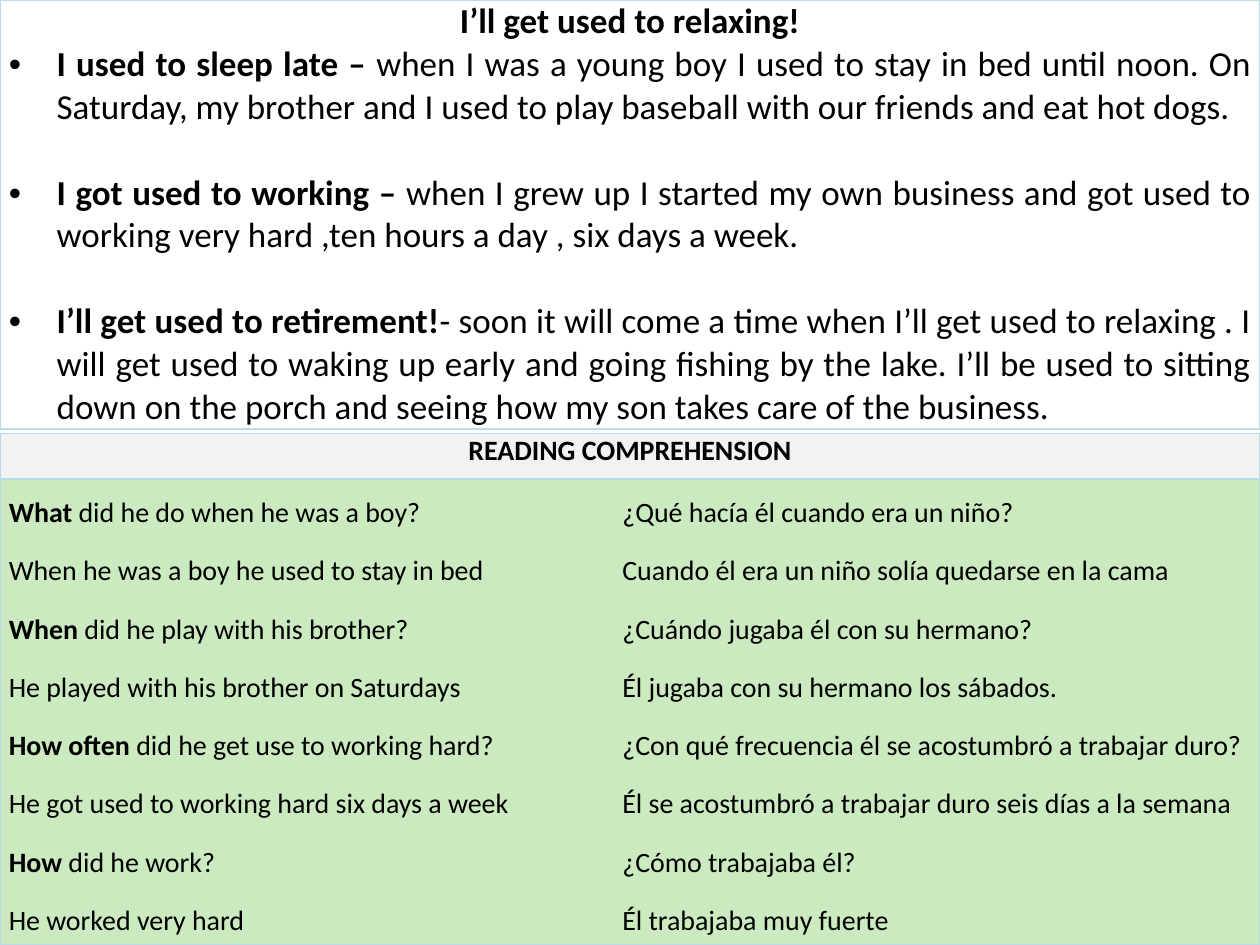
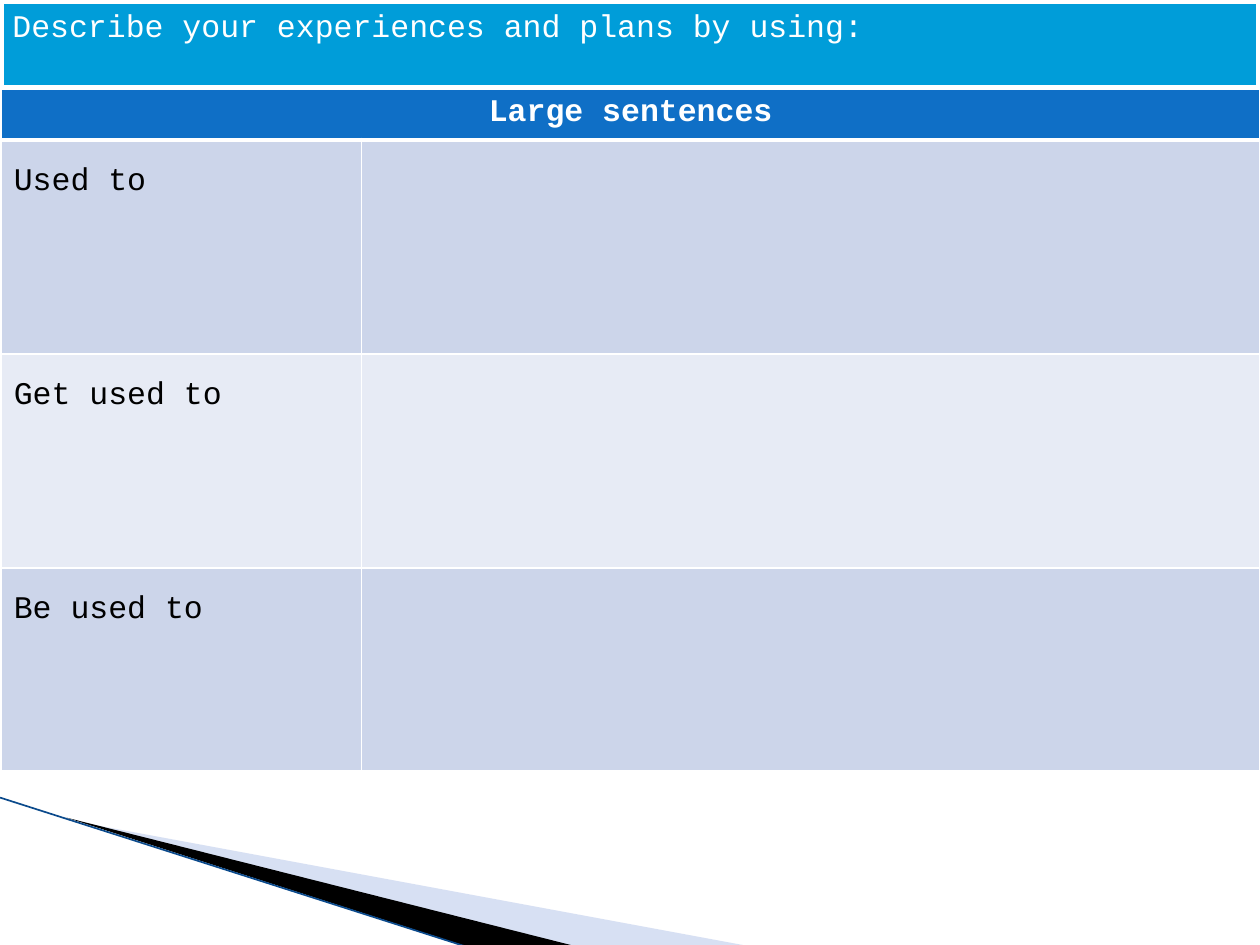
from dataclasses import dataclass

from lxml import etree
from pptx import Presentation
from pptx.dml.color import RGBColor
from pptx.enum.shapes import MSO_CONNECTOR, MSO_SHAPE
from pptx.enum.text import MSO_ANCHOR, PP_ALIGN
from pptx.oxml.ns import qn
from pptx.util import Inches, Pt

LEFT, CENTER, JUSTIFY = PP_ALIGN.LEFT, PP_ALIGN.CENTER, PP_ALIGN.JUSTIFY
TOP = MSO_ANCHOR.TOP
RECT = MSO_SHAPE.RECTANGLE
STRAIGHT = MSO_CONNECTOR.STRAIGHT


@dataclass(frozen=True)
class Theme:
    black: str = "000000"
    white: str = "FFFFFF"
    edge: str = "B6DDE8"
    gray: str = "F2F2F2"
    green: str = "CBEAC0"
    cyan: str = "009DD9"
    blue: str = "0F6FC6"
    bands: tuple = ("CCD5EA", "E7EBF5")
    pale: str = "9DB2E1"
    stripe: str = "0B4A8C"
    sans: str = "Calibri"
    mono: str = "Courier New"
    big: int = 20
    mid: int = 18
    small: int = 16


T = Theme()

TITLE = "I’ll get used to relaxing!"
STORY = [
    ("I used to sleep late – ",
     "when I was a young boy I used to stay in bed until noon. On Saturday, "
     "my brother and I used to play baseball with our friends and eat hot dogs."),
    ("I got used to working – ",
     "when I grew up I started my own business and got used to working very "
     "hard ,ten hours a day , six days a week."),
    ("I’ll get used to retirement!",
     "- soon it will come a time when I’ll get used to relaxing . I will get "
     "used to waking up early and going fishing by the lake. I’ll be used to "
     "sitting down on the porch and seeing how my son takes care of the business."),
]
# Bold lead, rest of the English line, Spanish line
QUIZ = [
    ("What", " did he do when he was a boy?", "¿Qué hacía él cuando era un niño?"),
    ("", "When he was a boy he used to stay in bed",
     "Cuando él era un niño solía quedarse en la cama"),
    ("When", " did he play with his brother?", "¿Cuándo jugaba él con su hermano?"),
    ("", "He played with his brother on Saturdays",
     "Él jugaba con su hermano los sábados."),
    ("How often", " did he get use to working hard?",
     "¿Con qué frecuencia él se acostumbró a trabajar duro?"),
    ("", "He got used to working hard six days a week",
     "Él se acostumbró a trabajar duro seis días a la semana"),
    ("How", " did he work?", "¿Cómo trabajaba él?"),
    ("", "He worked very hard", "Él trabajaba muy fuerte"),
]
FORMS = ["Used to", "Get used to", "Be used to"]


def rgb(code):
    return RGBColor.from_string(code)


def paint(fill, code):
    fill.solid()
    fill.fore_color.rgb = rgb(code)


def write(para, lead, rest, size, face, color=T.black, align=LEFT, space=None):
    """Fill a paragraph with a bold lead and a plain rest."""
    para.text = lead or rest
    if lead and rest:
        para.add_run().text = rest
    para.alignment = align
    if space:
        para.line_spacing = space
    for i, run in enumerate(para.runs):
        font = run.font
        font.size, font.name, font.color.rgb = Pt(size), face, rgb(color)
        font.bold = bool(lead) and i == 0


def bullet(para, indent):
    props = para._p.get_or_add_pPr()
    props.set("marL", str(Inches(indent)))
    props.set("indent", str(-Inches(indent)))
    etree.SubElement(props, qn("a:buFont")).set("typeface", "Arial")
    etree.SubElement(props, qn("a:buChar")).set("char", "•")


def border(cell, color, sides="LRTB", heavy=""):
    """Draw the named sides and clear the others."""
    props = cell._tc.get_or_add_tcPr()
    for i, side in enumerate("LRTB"):
        line = etree.Element(qn(f"a:ln{side}"), w=str(Pt(3 if side in heavy else 1)))
        if side in sides:
            fill = etree.SubElement(line, qn("a:solidFill"))
            etree.SubElement(fill, qn("a:srgbClr")).set("val", color)
        else:
            etree.SubElement(line, qn("a:noFill"))
        props.insert(i, line)


def grid(slide, box, cols, rows):
    """Add an unstyled table with set column widths and row heights."""
    x, y, w, h = box
    frame = slide.shapes.add_table(len(rows), len(cols), Inches(x), Inches(y),
                                   Inches(w), Inches(h))
    table = frame.table
    table.first_row = table.horz_banding = False
    for col, wide in zip(table.columns, cols):
        col.width = Inches(wide)
    for row, high in zip(table.rows, rows):
        row.height = Inches(high)
    return table


def tight(cell):
    cell.margin_left = cell.margin_right = Inches(0.07)
    cell.margin_top = cell.margin_bottom = 0


def reframe(shape, box):
    """Give an outline a new frame while its points stay in place."""
    x, y, w, h = map(Inches, box)
    dx, dy = shape.left - x, shape.top - y
    outline = shape._element.spPr.find(f".//{qn('a:path')}")
    for point in outline.iter(qn("a:pt")):
        point.set("x", str(int(point.get("x")) + dx))
        point.set("y", str(int(point.get("y")) + dy))
    outline.set("w", str(w))
    outline.set("h", str(h))
    shape.left, shape.top, shape.width, shape.height = x, y, w, h


def wedge(slide, box, points, color, alpha=None):
    (x, y), *rest = [(Inches(a), Inches(b)) for a, b in points]
    form = slide.shapes.build_freeform(x, y)
    form.add_line_segments(rest, close=True)
    shape = form.convert_to_shape()
    reframe(shape, box)
    shape.shadow.inherit = False
    paint(shape.fill, color)
    shape.line.fill.background()
    if alpha:
        tone = shape.fill._xPr.find(f".//{qn('a:srgbClr')}")
        etree.SubElement(tone, qn("a:alpha")).set("val", str(alpha * 1000))


def corner(slide, box):
    """Lower left decoration shared by the slides."""
    x, y, w, h = box
    foot = y + h
    wedge(slide, (x + 0.78, y - 0.86, 4.16, 1.58),
          [(x + 0.55, y + 0.18), (x + w, foot), (x + 4.56, foot)], T.pale, 40)
    wedge(slide, (x - 0.06, y, 4.16, 0.92),
          [(x + 0.53, y + 0.16), (x + 4.57, foot), (x + 3.7, foot)], T.black)
    line = slide.shapes.add_connector(STRAIGHT, Inches(x), Inches(y),
                                      Inches(x + 3.69), Inches(foot))
    line.line.color.rgb = rgb(T.stripe)
    line.line.width = Pt(0.95)
    etree.SubElement(line._element.spPr, qn("a:effectLst"))


def story(slide, box):
    """Framed reading text with a title and bullets."""
    cell = grid(slide, box, [box[2]], [box[3]]).cell(0, 0)
    tight(cell)
    cell.fill.background()
    border(cell, T.edge)
    text = cell.text_frame
    write(text.paragraphs[0], TITLE, "", T.big, T.sans, align=CENTER)
    for i, (lead, rest) in enumerate(STORY):
        para = text.add_paragraph()
        bullet(para, 0.38)
        write(para, lead, rest, T.big, T.sans, align=JUSTIFY)
        if i:
            para.space_before = Pt(24.6)


def quiz(slide, box):
    """Questions and answers in two languages."""
    head, count = 0.36, len(QUIZ)
    step = (box[3] - head) / count
    table = grid(slide, box, [4.87, 5.13], [head] + [step] * count)
    top = table.cell(0, 0)
    top.merge(table.cell(0, 1))
    for cell in (top, table.cell(0, 1)):
        tight(cell)
        paint(cell.fill, T.gray)
        border(cell, T.edge)
    write(top.text_frame.paragraphs[0], "READING COMPREHENSION", "",
          T.small, T.sans, align=CENTER)
    for r, (lead, rest, other) in enumerate(QUIZ, 1):
        ends = ("T" if r == 1 else "") + ("B" if r == count else "")
        for c, (bold, plain) in enumerate([(lead, rest), ("", other)]):
            cell = table.cell(r, c)
            tight(cell)
            paint(cell.fill, T.green)
            border(cell, T.edge, "LR"[c] + ends)
            write(cell.text_frame.paragraphs[0], bold, plain, T.small, T.sans,
                  space=1.5)


def banner(slide, box):
    """Blue band with the task."""
    shape = slide.shapes.add_shape(RECT, *map(Inches, box))
    shape.shadow.inherit = False
    paint(shape.fill, T.cyan)
    shape.line.color.rgb = rgb(T.white)
    shape.line.width = Pt(5)
    text = shape.text_frame
    text.word_wrap = True
    text.vertical_anchor = TOP
    write(text.paragraphs[0], "", "Describe your experiences and plans by using:",
          T.mid, T.mono, T.white, JUSTIFY)


def sheet(slide, box):
    """Answer sheet with one row for each form."""
    table = grid(slide, box, [2.86, box[2] - 2.86], [0.4, 1.7, 1.7, 1.61])
    top = table.cell(0, 0)
    top.merge(table.cell(0, 1))
    for cell in (top, table.cell(0, 1)):
        paint(cell.fill, T.blue)
        border(cell, T.white, heavy="B")
    write(top.text_frame.paragraphs[0], "Large sentences", "", T.mid, T.mono,
          T.white, CENTER)
    for r, form in enumerate(FORMS, 1):
        for c in range(2):
            cell = table.cell(r, c)
            paint(cell.fill, T.bands[(r - 1) % 2])
            border(cell, T.white, heavy="T" if r == 1 else "")
        write(table.cell(r, 0).text_frame.paragraphs[0], "", form, T.mid, T.mono,
              space=1.5)


def main():
    deck = Presentation()
    deck.slide_width, deck.slide_height = Inches(10), Inches(7.5)
    pages = [
        [(story, (0, 0, 10, 3.4)), (quiz, (0, 3.44, 10, 4.06))],
        [(banner, (0, 0, 10, 0.71)), (sheet, (0.01, 0.71, 9.99, 5.41))],
    ]
    for parts in pages:
        slide = deck.slides.add_slide(deck.slide_layouts[6])
        corner(slide, (0, 6.33, 5.95, 1.18))
        for draw, box in parts:
            draw(slide, box)
    deck.save("out.pptx")


if __name__ == "__main__":
    main()
